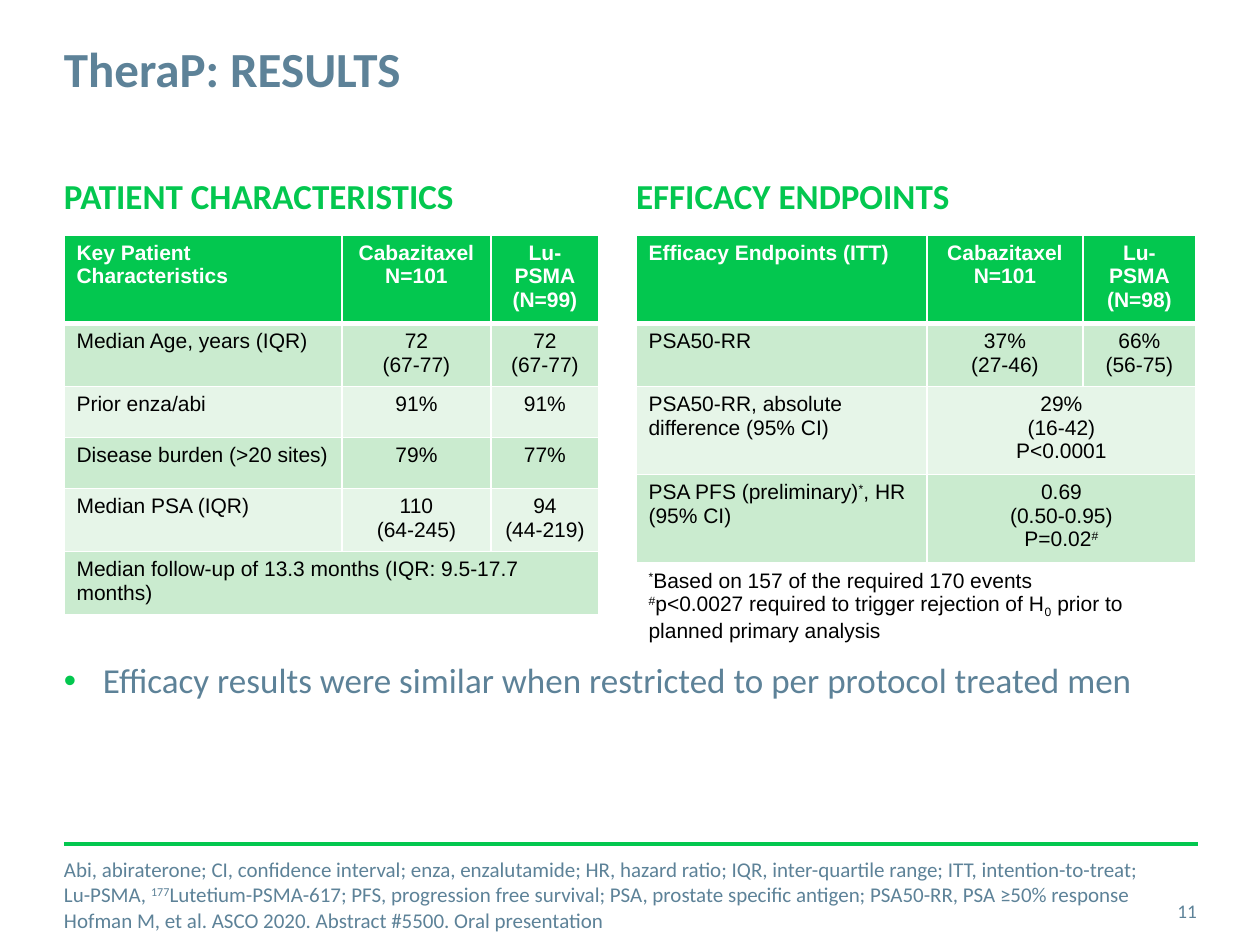
"""Build the TheraP results slide with its two tables."""
from lxml.etree import SubElement
from pptx import Presentation
from pptx.dml.color import RGBColor
from pptx.enum.shapes import MSO_CONNECTOR as Connector
from pptx.enum.text import MSO_ANCHOR as Anchor, PP_ALIGN as Align
from pptx.oxml.ns import qn
from pptx.util import Pt

GREEN = RGBColor(0x03, 0xC7, 0x4F)
SLATE = RGBColor(0x5D, 0x82, 0x98)
DARK_BAND = RGBColor(0xCA, 0xEB, 0xCF)
LIGHT_BAND = RGBColor(0xE6, 0xF5, 0xE8)
WHITE = RGBColor(0xFF, 0xFF, 0xFF)
BLACK = RGBColor(0, 0, 0)

SUPER, SUB = 30000, -25000
LEFT, RIGHT = 64, 636
TABLE_TOP, ROW_HEIGHT = 235, 51

TITLE = ["TheraP: RESULTS"]
HEADINGS = [(LEFT, "PATIENT CHARACTERISTICS"), (RIGHT, "EFFICACY ENDPOINTS")]
FINDING = ["Efficacy results were similar when restricted to per protocol treated men"]
FOOTNOTE = [
    ["Abi, abiraterone; CI, confidence interval; enza, enzalutamide; HR, hazard ratio; "
     "IQR, inter-quartile range; ITT, intention-to-treat; Lu-PSMA, ",
     ("177", SUPER),
     "Lutetium-PSMA-617; PFS, progression free survival; PSA, prostate specific antigen; "
     "PSA50-RR, PSA ≥50% response"],
    "Hofman M, et al. ASCO 2020. Abstract #5500. Oral presentation",
]
PATIENTS = [
    [["Key Patient Characteristics"], ["Cabazitaxel", "N=101"], ["Lu-PSMA", "(N=99)"]],
    [["Median Age, years (IQR)"], ["72", "(67-77)"], ["72", "(67-77)"]],
    [["Prior enza/abi"], ["91%"], ["91%"]],
    [["Disease burden (>20 sites)"], ["79%"], ["77%"]],
    [["Median PSA (IQR)"], ["110", "(64-245)"], ["94", "(44-219)"]],
    [["Median follow-up of 13.3 months (IQR: 9.5-17.7 months)"]],
]
ENDPOINTS = [
    [["Efficacy Endpoints (ITT)"], ["Cabazitaxel", "N=101"], ["Lu-PSMA", "(N=98)"]],
    [["PSA50-RR"], ["37%", "(27-46)"], ["66%", "(56-75)"]],
    [["PSA50-RR, absolute difference (95% CI)"], ["29%", "(16-42)", "P<0.0001"]],
    [[["PSA PFS (preliminary)", ("*", SUPER), ", HR (95% CI)"]],
     ["0.69", "(0.50-0.95)", ["P=0.02", ("#", SUPER)]]],
    [[[("*", SUPER), "Based on 157 of the required 170 events"],
      [("#", SUPER), "p<0.0027 required to trigger rejection of H", ("0", SUB),
       " prior to planned primary analysis"]]],
]
TABLES = [
    (LEFT, 343, (278, 149, 108), PATIENTS, DARK_BAND),
    (RIGHT, 391, (291, 156, 113), ENDPOINTS, WHITE),
]


def px(length):
    return round(length * 914400 / 126)


def write(frame, paragraphs, size, color, font="Calibri", bold=False,
          align=Align.LEFT, bullet=False, spacing=None):
    for index, runs in enumerate(paragraphs):
        para = frame.add_paragraph() if index else frame.paragraphs[0]
        para.alignment = align
        if spacing:
            para.line_spacing = spacing
        if bullet:
            add_bullet(para)
        para.font.size, para.font.name, para.font.bold = Pt(size), font, bold
        para.font.color.rgb = color
        for run in [runs] if isinstance(runs, str) else runs:
            text, baseline = (run, 0) if isinstance(run, str) else run
            span = para.add_run()
            span.text = text
            if baseline:
                span._r.get_or_add_rPr().set("baseline", str(baseline))


def add_bullet(para):
    props = para._p.get_or_add_pPr()
    props.set("marL", str(px(39)))
    props.set("indent", str(-px(39)))
    SubElement(SubElement(props, qn("a:buClr")), qn("a:srgbClr"), val=str(GREEN))
    SubElement(props, qn("a:buFont"), typeface="Arial")
    SubElement(props, qn("a:buChar"), char="•")


def add_text(page, bounds, paragraphs, size, color, anchor=Anchor.TOP, **style):
    box = page.shapes.add_textbox(*map(px, bounds))
    frame = box.text_frame
    frame.word_wrap = True
    frame.vertical_anchor = anchor
    frame.margin_left = frame.margin_right = frame.margin_top = frame.margin_bottom = 0
    write(frame, paragraphs, size, color, **style)


def add_borders(cell, row):
    props = cell._tc.get_or_add_tcPr()
    for side in "LRTB":
        thick = (row, side) in ((0, "B"), (1, "T"))
        line = SubElement(props, qn(f"a:ln{side}"), w=str(Pt(3 if thick else 1)))
        fill = SubElement(line, qn("a:solidFill"))
        SubElement(fill, qn("a:srgbClr"), val=str(WHITE))


def add_grid(page, left, height, widths, rows, last_fill):
    box = page.shapes.add_table(len(rows), len(widths), px(left), px(TABLE_TOP),
                                px(sum(widths)), px(ROW_HEIGHT * len(rows)))
    table = box.table
    for column, width in zip(table.columns, widths):
        column.width = px(width)
    box.height = px(height)
    last = len(widths) - 1
    for r, row in enumerate(rows):
        fill = GREEN if r == 0 else DARK_BAND if r % 2 else LIGHT_BAND
        if r == len(rows) - 1:
            fill = last_fill
        for c in range(len(widths)):
            cell = table.cell(r, c)
            add_borders(cell, r)
            cell.fill.solid()
            cell.fill.fore_color.rgb = fill
        if len(row) < len(widths):
            table.cell(r, len(row) - 1).merge(table.cell(r, last))
        for c, paragraphs in enumerate(row):
            write(table.cell(r, c).text_frame, paragraphs, 12, BLACK if r else WHITE,
                  font="Arial", bold=r == 0, align=Align.CENTER if c else Align.LEFT)


def main():
    deck = Presentation()
    deck.slide_width, deck.slide_height = px(1260), px(945)
    page = deck.slides.add_slide(deck.slide_layouts[6])

    rule = page.shapes.add_connector(Connector.STRAIGHT, px(LEFT), px(844), px(1198), px(844))
    rule.line.color.rgb = GREEN
    rule.line.width = Pt(2)
    SubElement(rule._element.spPr, qn("a:effectLst"))

    add_text(page, (LEFT, 34, 903, 111), TITLE, 28, SLATE, bold=True, spacing=1.07)
    for left, heading in HEADINGS:
        add_text(page, (left, 175, 537, 98), [heading], 20, GREEN, bold=True)
    for table in TABLES:
        add_grid(page, *table)
    add_text(page, (LEFT, 659, 1101, 111), FINDING, 20, SLATE, bullet=True)
    add_text(page, (LEFT, 873, 1101, 43), FOOTNOTE, 12, SLATE, anchor=Anchor.MIDDLE)
    add_text(page, (1116, 886, 81, 50), ["11"], 11, SLATE, anchor=Anchor.MIDDLE,
             align=Align.RIGHT)
    deck.save("out.pptx")


if __name__ == "__main__":
    main()
